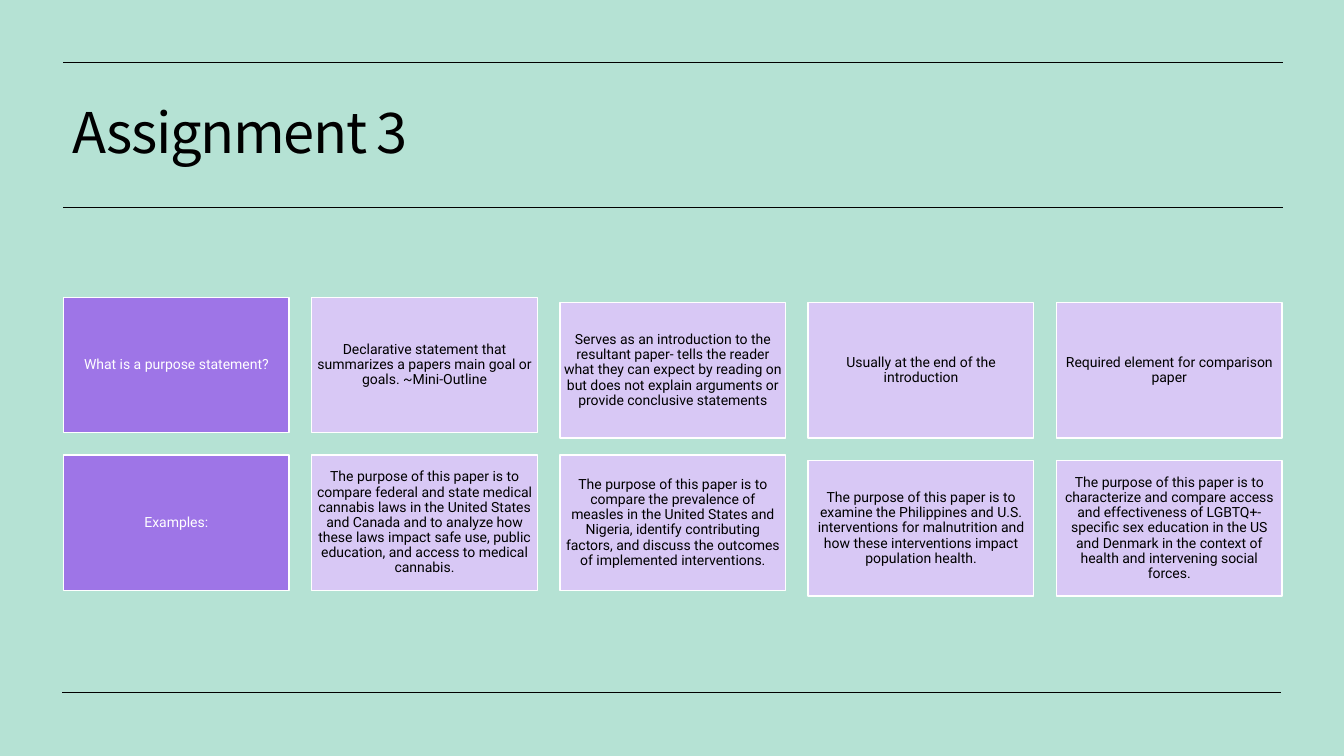
from lxml import etree
from pptx import Presentation
from pptx.dml.color import RGBColor
from pptx.enum.shapes import MSO_CONNECTOR, MSO_SHAPE
from pptx.enum.text import MSO_ANCHOR, MSO_AUTO_SIZE, PP_ALIGN
from pptx.oxml.ns import qn
from pptx.util import Cm, Pt

STRAIGHT = MSO_CONNECTOR.STRAIGHT
RECTANGLE = MSO_SHAPE.RECTANGLE
MIDDLE = MSO_ANCHOR.MIDDLE
NO_AUTOFIT = MSO_AUTO_SIZE.NONE
LEFT, CENTER = PP_ALIGN.LEFT, PP_ALIGN.CENTER
TITLE_ONLY = 5

COLORS = {
    "background": "B5E2D4",
    "heading": "9E75E7",
    "detail": "D8C8F5",
    "black": "000000",
    "white": "FFFFFF",
}

ROWS = [
    [
        "What is a purpose statement?",
        "Declarative statement that summarizes a papers main goal or goals. ~Mini-Outline",
        "Serves as an introduction to the resultant paper- tells the reader what they can "
        "expect by reading on but does not explain arguments or provide conclusive statements",
        "Usually at the end of the introduction",
        "Required element for comparison paper",
    ],
    [
        "Examples:",
        "The purpose of this paper is to compare federal and state medical cannabis laws in "
        "the United States and Canada and to analyze how these laws impact safe use, public "
        "education, and access to medical cannabis.",
        "The purpose of this paper is to compare the prevalence of measles in the United "
        "States and Nigeria, identify contributing factors, and discuss the outcomes of "
        "implemented interventions.",
        "The purpose of this paper is to examine the Philippines and U.S. interventions for "
        "malnutrition and how these interventions impact population health.",
        "The purpose of this paper is to characterize and compare access and effectiveness "
        "of LGBTQ+-specific sex education in the US and Denmark in the context of health "
        "and intervening social forces.",
    ],
]
FIRST_LOWERED_COLUMN = [2, 3]


def color(name):
    """Return the named palette colour."""
    return RGBColor.from_string(COLORS[name])


def write_text(shape, text, font="Roboto", size=10, fill="black", align=CENTER,
               inset=None, space_after=0, tracking=None):
    """Write one formatted paragraph into a shape."""
    frame = shape.text_frame
    frame.word_wrap = True
    frame.auto_size = NO_AUTOFIT
    frame.vertical_anchor = MIDDLE
    if inset is not None:
        frame.margin_left = frame.margin_right = Cm(inset)
        frame.margin_top = frame.margin_bottom = Cm(inset)
    paragraph = frame.paragraphs[0]
    paragraph.alignment = align
    paragraph.line_spacing = 0.9
    paragraph.space_after = Pt(space_after)
    run = paragraph.add_run()
    run.text = text
    run.font.name = font
    run.font.size = Pt(size)
    run.font.color.rgb = color(fill)
    if tracking is not None:
        run.font._element.set("spc", str(tracking * 100))


def add_rule(slide, left, top, width):
    """Draw a thin horizontal rule."""
    rule = slide.shapes.add_connector(STRAIGHT, Cm(left), Cm(top), Cm(left + width), Cm(top))
    rule.line.color.rgb = color("black")
    rule.line.width = Pt(0.5)
    etree.SubElement(rule._element.spPr, qn("a:effectLst"))


def add_header(slide, left, top, width, height):
    """Place the title between its two rules."""
    for rule_top in (top, top + height):
        add_rule(slide, left, rule_top, width)
    title = slide.shapes.title
    title.left, title.top = Cm(left - 0.02), Cm(top + 0.33)
    title.width, title.height = Cm(width), Cm(height - 0.64)
    write_text(title, "Assignment 3", font="Noto Sans CJK KR", size=40, align=LEFT, tracking=-1)


def add_card(slide, left, top, width, height, text, is_heading):
    """Draw one bordered card with centred text."""
    card = slide.shapes.add_shape(RECTANGLE, Cm(left), Cm(top), Cm(width), Cm(height))
    card.shadow.inherit = False
    card.fill.solid()
    card.fill.fore_color.rgb = color("heading" if is_heading else "detail")
    card.line.color.rgb = color("white")
    card.line.width = Pt(1)
    write_text(card, text, fill="white" if is_heading else "black", inset=0.1, space_after=3.5)


def add_card_grid(slide, left, top, width, height, gap=0.57, drop=0.14):
    """Fill the box with rows of cards, the last ones of each row slightly lower."""
    card_width = (width + gap) / len(ROWS[0]) - gap
    card_height = (height - drop + gap) / len(ROWS) - gap
    for row, texts in enumerate(ROWS):
        for column, text in enumerate(texts):
            lowered = drop if column >= FIRST_LOWERED_COLUMN[row] else 0
            add_card(slide, left + column * (card_width + gap),
                     top + row * (card_height + gap) + lowered,
                     card_width, card_height, text, column == 0)


def main():
    """Build and save the slide."""
    presentation = Presentation()
    presentation.slide_width, presentation.slide_height = Cm(33.87), Cm(19.05)
    slide = presentation.slides.add_slide(presentation.slide_layouts[TITLE_ONLY])
    slide.background.fill.solid()
    slide.background.fill.fore_color.rgb = color("background")
    add_header(slide, 1.6, 1.58, 30.73, 3.65)
    add_card_grid(slide, 1.6, 7.49, 30.71, 7.53)
    add_rule(slide, 1.57, 17.45, 30.71)
    presentation.save("out.pptx")


if __name__ == "__main__":
    main()
